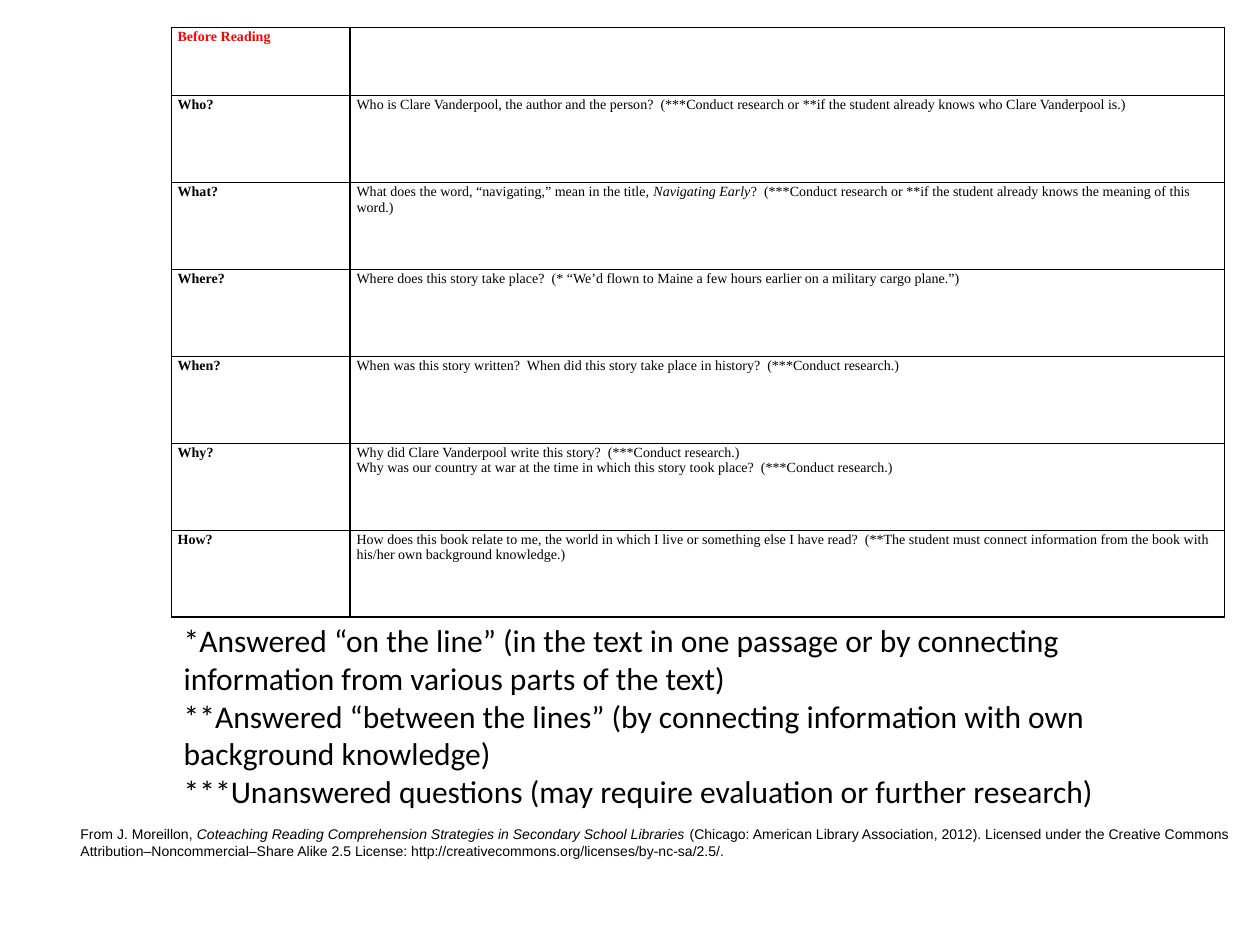
import pptx
import pptx.dml.color
import pptx.enum.text
import pptx.oxml
import pptx.oxml.ns
import pptx.util
from pptx.util import Inches

BLACK = pptx.dml.color.RGBColor(0x00, 0x00, 0x00)
RED = pptx.dml.color.RGBColor(0xFF, 0x00, 0x00)

QUESTIONS = [
    ("Before Reading", []),
    ("Who?", ["Who is Clare Vanderpool, the author and the person?  (***Conduct research or **if the student already knows who Clare Vanderpool is.)"]),
    ("What?", ["What does the word, “navigating,” mean in the title, |Navigating Early|?  (***Conduct research or **if the student already knows the meaning of this word.)"]),
    ("Where?", ["Where does this story take place?  (* “We’d flown to Maine a few hours earlier on a military cargo plane.”)"]),
    ("When?", ["When was this story written?  When did this story take place in history?  (***Conduct research.)"]),
    ("Why?", ["Why did Clare Vanderpool write this story?  (***Conduct research.)",
              "Why was our country at war at the time in which this story took place?  (***Conduct research.)"]),
    ("How?", ["How does this book relate to me, the world in which I live or something else I have read?  (**The student must connect information from the book with his/her own background knowledge.)"]),
]
ANSWER_KEY = [
    "*Answered “on the line” (in the text in one passage or by connecting information from various parts of the text)",
    "**Answered “between the lines” (by connecting information with own background knowledge)",
    "***Unanswered questions (may require evaluation or further research)",
]
CITATION = [
    "From J. Moreillon, |Coteaching Reading Comprehension Strategies in Secondary School Libraries| (Chicago: American Library Association, 2012). Licensed under the Creative Commons",
    "Attribution–Noncommercial–Share Alike 2.5 License: http://creativecommons.org/licenses/by-nc-sa/2.5/.",
]


class SlideBuilder:
    """Adds consistently styled elements to one slide."""

    table_font = "Times New Roman"
    small_size = 8

    def __init__(self, slide):
        self.slide = slide

    def add_lines(self, text_frame, lines, font, size, color=BLACK, bold=False):
        for index, line in enumerate(lines or [""]):
            paragraph = text_frame.add_paragraph() if index else text_frame.paragraphs[0]
            paragraph.font.name = font
            paragraph.font.size = pptx.util.Pt(size)
            paragraph.font.color.rgb = color
            paragraph.font.bold = bold
            for position, part in enumerate(line.split("|")):
                if part:
                    run = paragraph.add_run()
                    run.text = part
                    if position % 2:
                        run.font.italic = True

    def add_border(self, cell):
        properties = cell._tc.get_or_add_tcPr()
        for side in "LRTB":
            properties.append(pptx.oxml.parse_xml(
                f'<a:ln{side} {pptx.oxml.ns.nsdecls("a")} w="12700"><a:solidFill>'
                f'<a:srgbClr val="{BLACK}"/></a:solidFill></a:ln{side}>'))

    def add_cell(self, cell, lines, color=BLACK, bold=False):
        cell.margin_left = cell.margin_right = Inches(0.05)
        cell.margin_top = cell.margin_bottom = Inches(0.01)
        self.add_border(cell)
        cell.fill.background()
        self.add_lines(cell.text_frame, lines, self.table_font, self.small_size, color, bold)

    def add_question_table(self, left, top, column_widths, row_heights, questions):
        frame = self.slide.shapes.add_table(
            len(questions), len(column_widths), Inches(left), Inches(top),
            Inches(sum(column_widths)), Inches(sum(row_heights)))
        table = frame.table
        table.first_row = table.horz_banding = False
        for column, width in zip(table.columns, column_widths):
            column.width = Inches(width)
        for index, (row, height) in enumerate(zip(table.rows, row_heights)):
            row.height = Inches(height)
            heading, lines = questions[index]
            self.add_cell(row.cells[0], [heading], BLACK if index else RED, True)
            self.add_cell(row.cells[1], lines)

    def add_text(self, left, top, width, height, lines, font, size, wrap=True,
                 anchor=pptx.enum.text.MSO_ANCHOR.TOP):
        box = self.slide.shapes.add_textbox(
            Inches(left), Inches(top), Inches(width), Inches(height))
        text_frame = box.text_frame
        text_frame.word_wrap = wrap
        text_frame.auto_size = pptx.enum.text.MSO_AUTO_SIZE.SHAPE_TO_FIT_TEXT
        text_frame.vertical_anchor = anchor
        self.add_lines(text_frame, lines, font, size)


def main():
    presentation = pptx.Presentation()
    presentation.slide_width = Inches(10)
    presentation.slide_height = Inches(7.5)
    builder = SlideBuilder(presentation.slides.add_slide(presentation.slide_layouts[6]))
    builder.add_question_table(1.36, 0.22, [1.42, 6.94], [0.54] + [0.69] * 6, QUESTIONS)
    builder.add_text(1.36, 4.88, 8.37, 1.62, ANSWER_KEY, "Calibri", 18)
    builder.add_text(0.54, 6.5, 9.46, 0.37, CITATION, "Arial", builder.small_size,
                     wrap=False, anchor=pptx.enum.text.MSO_ANCHOR.MIDDLE)
    presentation.save("out.pptx")


if __name__ == "__main__":
    main()
